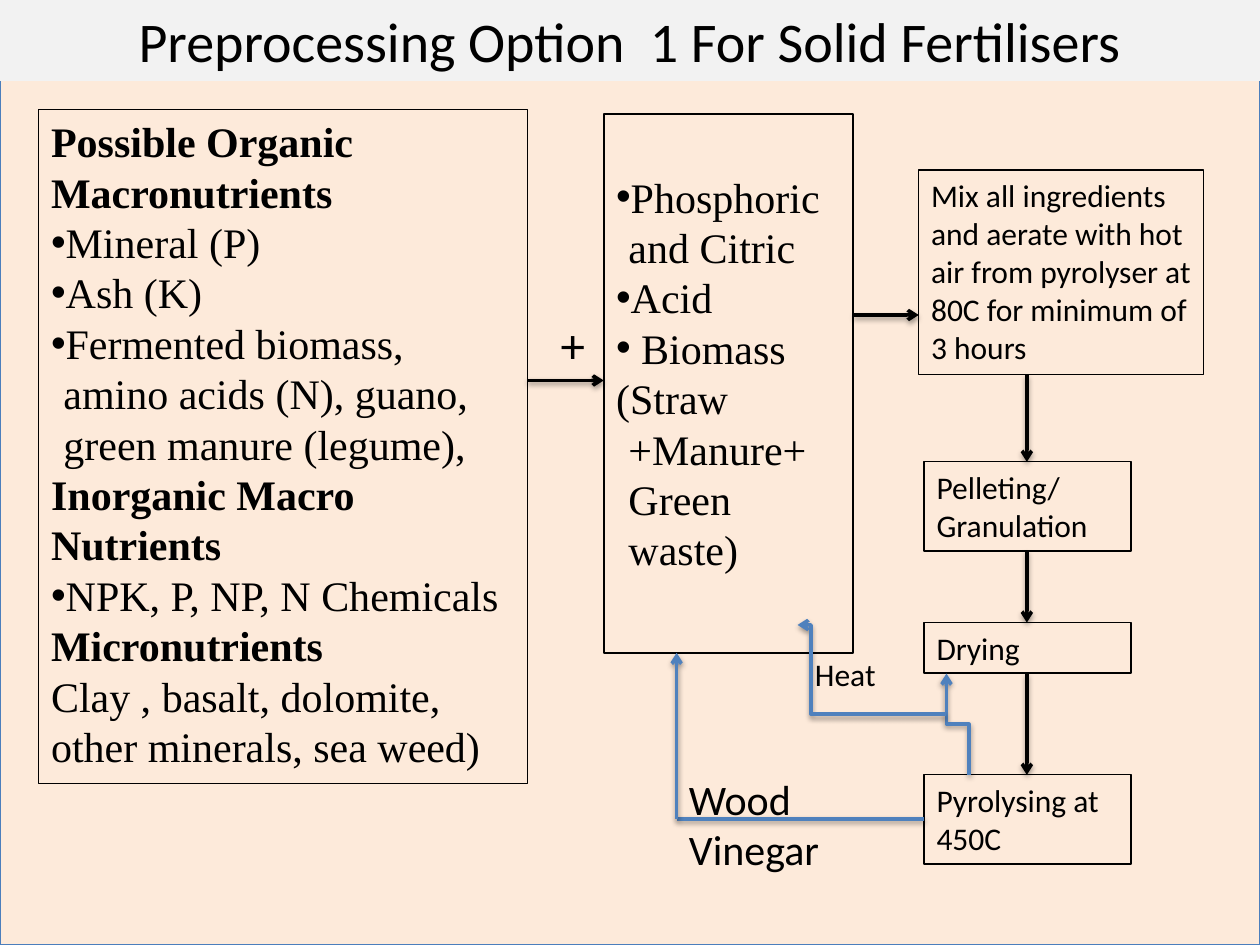
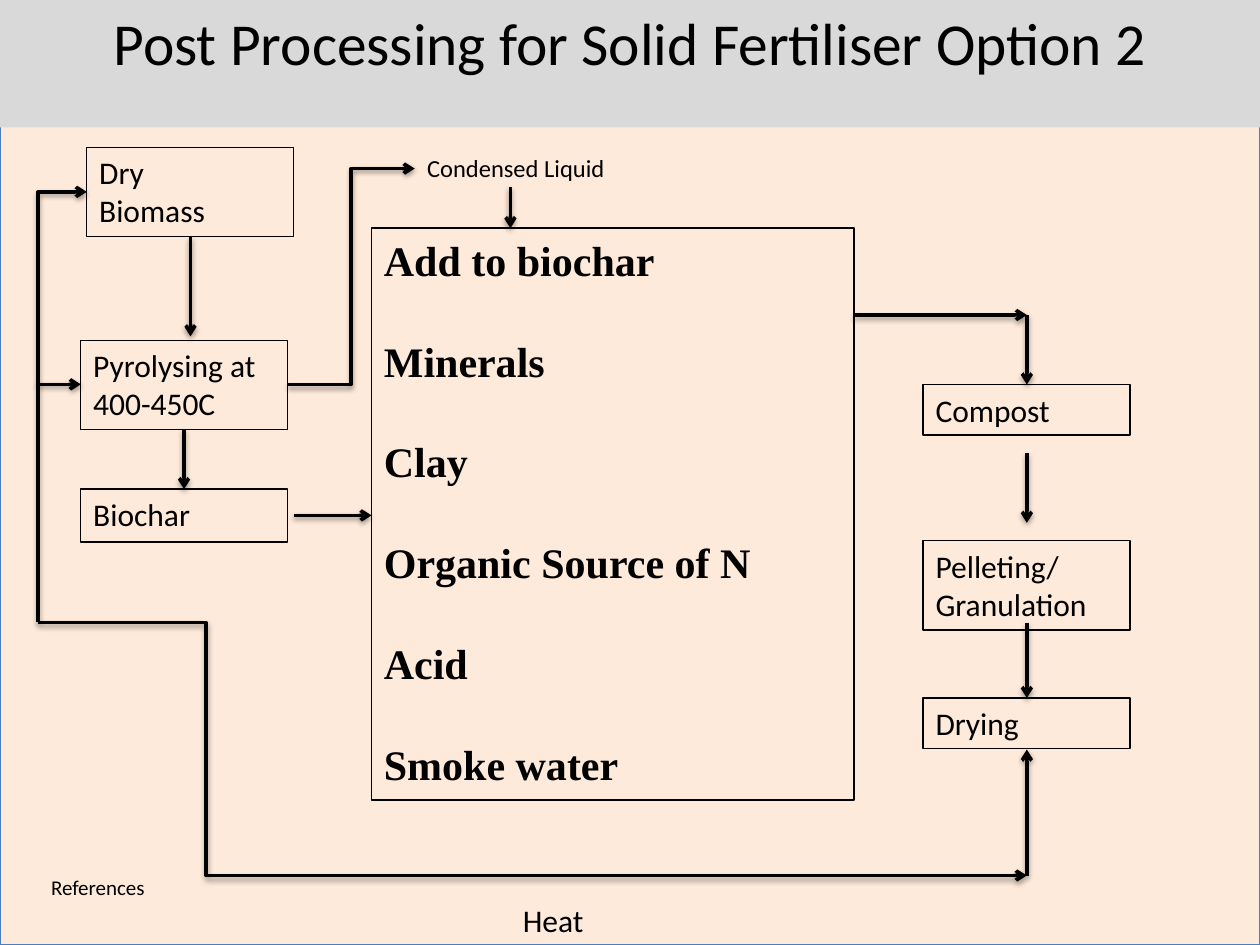
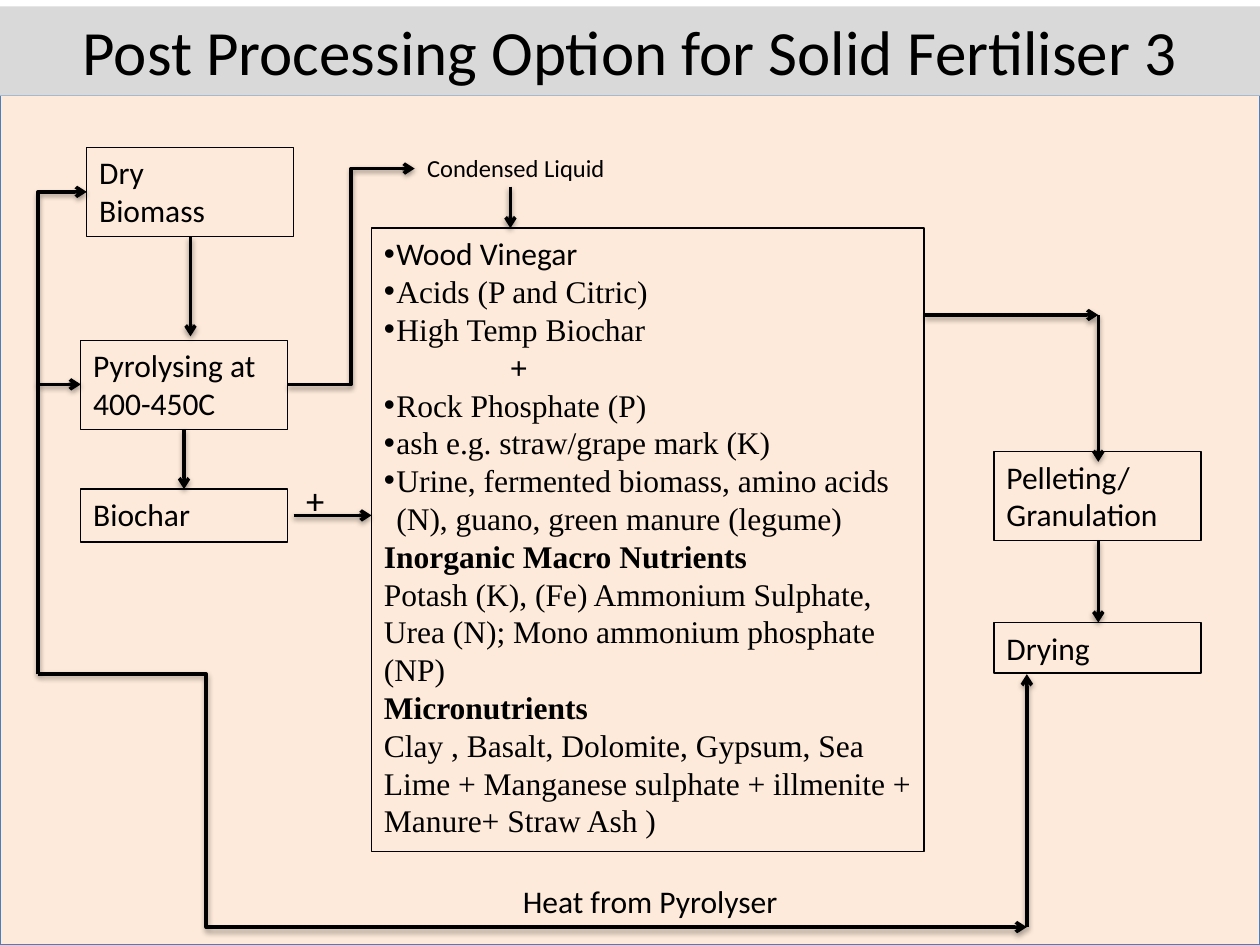
from pptx import Presentation
from pptx import util as u
from pptx.dml import color
from pptx.enum import shapes, text
from pptx.oxml import ns
from lxml import etree

BLACK, BLUE, EDGE = "000000", "4F81BD", "4B7EBC"
PEACH, PALE, GREY = "FDEADA", "F2F2F2", "D9D9D9"
SANS, SERIF = "Calibri", "Times New Roman"
WIDE, HIGH = 25.4, 19.05
STEP = 4.17
LOW, TALL = 1.02, 1.8
AXIS = 20.7


def paint(fill, tone):
    fill.solid()
    fill.fore_color.rgb = color.RGBColor.from_string(tone)


def add(parent, tag, **attrs):
    return etree.SubElement(parent, ns.qn(tag), {k: str(v) for k, v in attrs.items()})


def shade(shape):
    fx = add(shape._element.spPr, "a:effectLst")
    glow = add(fx, "a:outerShdw", blurRad=u.Pt(3.1), dist=u.Pt(1.6),
               dir=5400000, rotWithShape=0)
    tone = add(glow, "a:srgbClr", val=BLACK)
    add(tone, "a:alpha", val=38000)


def panel(slide, x, y, w, h, fill=None, edge=None, width=0.75):
    shape = slide.shapes.add_shape(shapes.MSO_SHAPE.RECTANGLE,
                                   u.Cm(x), u.Cm(y), u.Cm(w), u.Cm(h))
    if fill:
        paint(shape.fill, fill)
    else:
        shape.fill.background()
    if edge:
        paint(shape.line.fill, edge)
        shape.line.width = u.Pt(width)
    else:
        shape.line.fill.background()
    shape.shadow.inherit = False
    frame = shape.text_frame
    frame.word_wrap = True
    frame.vertical_anchor = text.MSO_ANCHOR.TOP
    return shape


def style(para, size, font=SANS, bold=False, align=text.PP_ALIGN.LEFT):
    para.alignment = align
    for run in para.runs:
        run.font.size = u.Pt(size)
        run.font.name = font
        run.font.bold = bold
        paint(run.font.fill, BLACK)


def step(slide, words, x, y, h, w=STEP):
    shape = panel(slide, x, y, w, h, edge=BLACK)
    shape.text_frame.text = words
    for para in shape.text_frame.paragraphs:
        style(para, 18)


def label(slide, words, x, y, w, h, size=18):
    frame = slide.shapes.add_textbox(u.Cm(x), u.Cm(y), u.Cm(w), u.Cm(h)).text_frame
    frame.word_wrap = True
    frame.text = words
    style(frame.paragraphs[0], size)
    return frame.paragraphs[0]


def indent(para, left, first, dot):
    props = para._p.get_or_add_pPr()
    props.set("marL", str(u.Cm(left)))
    props.set("indent", str(u.Cm(first)))
    if dot:
        add(props, "a:buFont", typeface="Arial")
        add(props, "a:buChar", char="•")


def recipe(slide, at, size, lines, gap=0, width=0.75):
    shape = panel(slide, *at, edge=BLACK, width=width)
    frame = shape.text_frame
    for i, (kind, words) in enumerate(lines):
        para = frame.add_paragraph() if i else frame.paragraphs[0]
        para.text = words
        if kind in ("dot", "sans", "hang"):
            indent(para, 0.25, -0.25, kind != "hang")
        elif kind == "plus":
            indent(para, 2.54, 0, False)
        if i and gap:
            para.space_before = u.Pt(gap)
        style(para, size, SANS if kind == "sans" else SERIF, kind in ("head", "plus"))
    return frame


def wire(slide, start, end, tone=BLACK, bend=None, turn=False, tip=True):
    (x1, y1), (x2, y2) = start, end
    if turn:
        mx, my = (x1 + x2) / 2, (y1 + y2) / 2
        x1, y1, x2, y2 = mx + my - y1, my + x1 - mx, mx + my - y2, my + x2 - mx
    kind = shapes.MSO_CONNECTOR.STRAIGHT if bend is None else shapes.MSO_CONNECTOR.ELBOW
    line = slide.shapes.add_connector(kind, u.Cm(x1), u.Cm(y1), u.Cm(x2), u.Cm(y2))
    paint(line.line.fill, tone)
    line.line.width = u.Pt(2)
    props = line._element.spPr
    if bend is not None:
        guides = props.find(ns.qn("a:prstGeom")).get_or_add_avLst()
        add(guides, "a:gd", name="adj1", fmla=f"val {round(bend * 100000)}")
    if turn:
        props.find(ns.qn("a:xfrm")).set("rot", "16200000")
    if tip:
        add(props.find(ns.qn("a:ln")), "a:tailEnd", type="arrow")
    shade(line)


def drop(slide, x, top, end):
    wire(slide, (x, top), (x, end))


def start(deck, title, size, top, band, fill, body):
    slide = deck.slides.add_slide(deck.slide_layouts[6])
    back = panel(slide, 0, body, WIDE, HIGH - body, PEACH, EDGE)
    back._element.spPr.remove(back._element.spPr.find(ns.qn("a:effectLst")))
    shade(back)
    head = panel(slide, 0, top, WIDE, band, fill)
    head.text_frame.text = title
    style(head.text_frame.paragraphs[0], size, align=text.PP_ALIGN.CENTER)
    return slide


def kiln(slide, heat, dry):
    side, base = 0.77, heat + 5.1
    step(slide, "Dry\nBiomass", 1.75, 2.97, TALL)
    step(slide, "Pyrolysing at 400-450C", 1.63, 6.86, TALL)
    step(slide, "Biochar", 1.63, 9.86, 1.07)
    label(slide, "Condensed Liquid", 8.36, 2.97, 4.27, 0.86, 14)
    drop(slide, 3.84, 4.78, 6.78)
    drop(slide, 3.71, 8.65, 9.86)
    drop(slide, 10.29, 3.76, 4.6)
    wire(slide, (5.92, 10.39), (7.49, 10.39))
    wire(slide, (5.8, 7.75), (8.36, 3.4), bend=0.5)
    wire(slide, (side, heat), (1.63, 7.75), bend=0)
    wire(slide, (side, 7.75), (1.75, 3.87), bend=0)
    wire(slide, (side, heat), (AXIS, base), bend=0.17)
    drop(slide, AXIS, base, dry)


def first(deck):
    slide = start(deck, "Preprocessing Option  1 For Solid Fertilisers",
                  32, 0, 1.63, PALE, 1.63)
    recipe(slide, (0.78, 2.21, 9.85, 13.58), 24, [
        ("head", "Possible Organic Macronutrients"),
        ("dot", "Mineral (P)"),
        ("dot", "Ash (K)"),
        ("dot", "Fermented biomass, amino acids (N), guano, green manure (legume),"),
        ("head", "Inorganic Macro Nutrients"),
        ("dot", "NPK, P, NP, N Chemicals"),
        ("head", "Micronutrients"),
        ("plain", "Clay , basalt, dolomite, other minerals, sea weed)")])
    acids = recipe(slide, (12.17, 2.3, 5.03, 10.86), 24, [
        ("dot", "Phosphoric and Citric"),
        ("dot", "Acid"),
        ("dot", " Biomass"),
        ("hang", "(Straw +Manure+ Green waste)")], width=1)
    acids.margin_top = u.Cm(1.15)
    step(slide, "Mix all ingredients and aerate with hot air from pyrolyser "
         "at 80C for minimum of 3 hours", 18.52, 3.43, 4.12, 5.74)
    x = 18.63
    step(slide, "Pelleting/Granulation", x, 9.31, TALL)
    step(slide, "Drying", x, 12.55, LOW)
    step(slide, "Pyrolysing at 450C", x, 15.62, TALL)
    for top, end in ((7.55, 9.31), (11.1, 12.55), (13.58, 15.62)):
        drop(slide, AXIS, top, end)
    wire(slide, (10.63, 7.67), (12.17, 7.67))
    wire(slide, (17.2, 6.35), (18.52, 6.35))
    wire(slide, (19.53, 15.62), (19.08, 13.58), BLUE, 0.5, turn=True)
    wire(slide, (19.08, 14.4), (16.08, 12.6), BLUE, 0.91)
    wire(slide, (x, 16.51), (13.64, 16.51), BLUE, tip=False)
    wire(slide, (13.64, 16.51), (13.64, 13.16), BLUE)
    label(slide, "Heat", 16.18, 13.08, 2.34, LOW)
    label(slide, "Wood Vinegar", 13.64, 15.47, 4.27, 2.31, 24)
    label(slide, "+", 11.05, 6.22, 0.79, 2.64, 28)


def second(deck):
    slide = start(deck, "Post Processing for Solid Fertiliser Option 2",
                  34, 0, 2.57, GREY, 2.31)
    items = ("Add to biochar", "Minerals", "Clay", "Organic Source of N",
             "Acid", "Smoke water")
    recipe(slide, (7.49, 4.6, 9.73, 11.53), 24, [("head", item) for item in items], 28.8)
    kiln(slide, 12.55, 15.11)
    x = 18.61
    step(slide, "Compost", x, 7.75, LOW)
    step(slide, "Pelleting/Granulation", x, 10.9, TALL)
    step(slide, "Drying", x, 14.07, LOW)
    wire(slide, (17.2, 6.35), (AXIS, 6.35))
    for top, end in ((6.35, 7.75), (9.14, 10.54), (12.55, 14.07)):
        drop(slide, AXIS, top, end)
    label(slide, "Heat", 10.29, 18.03, 2.34, LOW)
    label(slide, "References", 0.78, 17.5, 12.83, 0.76, 12)


def third(deck):
    slide = start(deck, "Post Processing Option for Solid Fertiliser 3",
                  36, 0.13, 1.8, GREY, 1.93)
    recipe(slide, (7.49, 4.6, 11.14, 12.57), 18, [
        ("sans", "Wood Vinegar"),
        ("dot", "Acids (P and Citric)"),
        ("dot", "High Temp Biochar"),
        ("plus", "+"),
        ("dot", "Rock Phosphate (P)"),
        ("dot", "ash e.g. straw/grape mark (K)"),
        ("dot", "Urine, fermented biomass, amino acids (N), guano, green manure (legume)"),
        ("head", "Inorganic Macro Nutrients"),
        ("plain", "Potash (K), (Fe) Ammonium Sulphate, Urea (N); "
                  "Mono ammonium phosphate (NP)"),
        ("head", "Micronutrients"),
        ("plain", "Clay , Basalt, Dolomite, Gypsum, Sea Lime + Manganese sulphate "
                  "+ illmenite + Manure+ Straw Ash )")])
    kiln(slide, 13.59, 13.59)
    x, mid = 20.04, 22.14
    step(slide, "Pelleting/Granulation", x, 9.1, TALL)
    step(slide, "Drying", x, 12.55, LOW)
    wire(slide, (18.63, 6.35), (mid, 6.35))
    drop(slide, mid, 6.35, 9.31)
    drop(slide, mid, 10.9, 12.55)
    label(slide, "Heat from Pyrolyser", 10.29, 17.65, 6.93, LOW)
    plus = label(slide, "+", 5.92, 8.66, 1.55, 1.27, 36)
    plus.runs[0]._r.get_or_add_rPr().set("baseline", "-25000")


def main():
    deck = Presentation()
    deck.slide_width, deck.slide_height = u.Cm(WIDE), u.Cm(HIGH)
    first(deck)
    second(deck)
    third(deck)
    deck.save("out.pptx")


if __name__ == "__main__":
    main()
